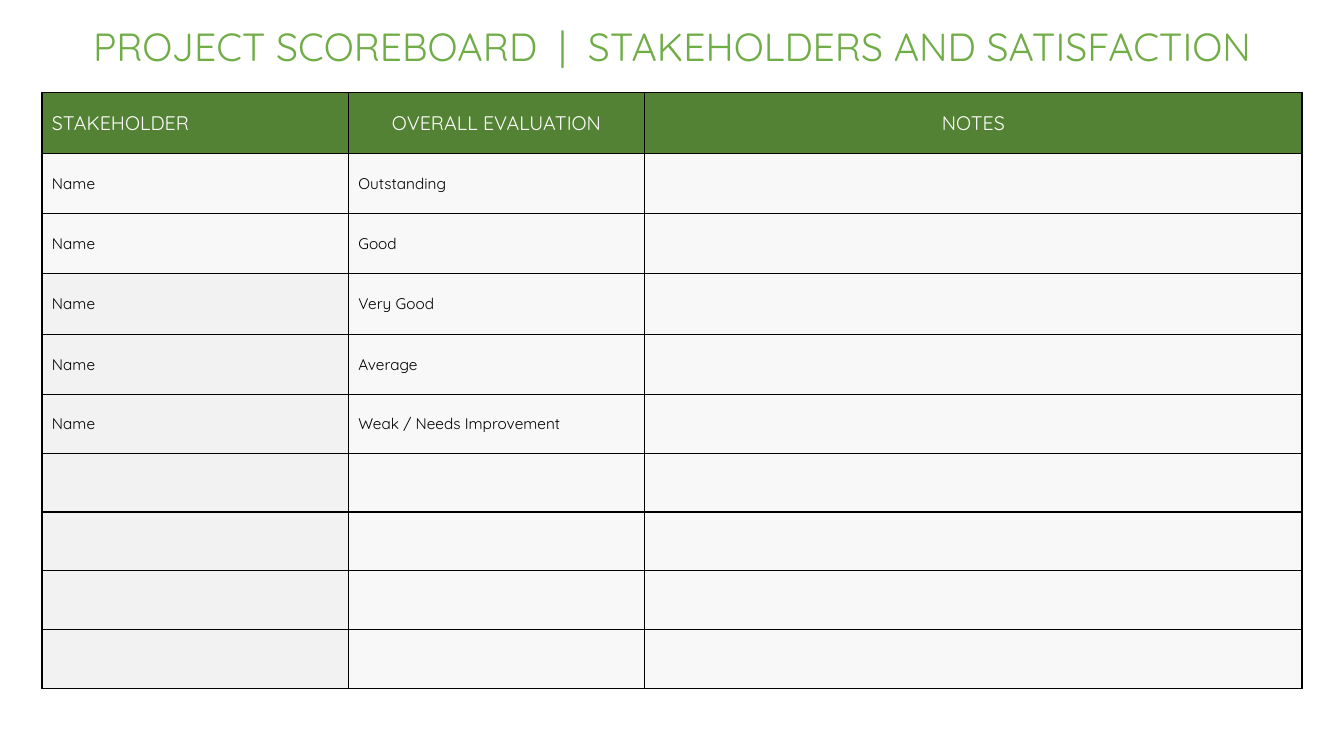
from dataclasses import dataclass

from lxml.etree import SubElement
from pptx import Presentation
from pptx.dml.color import RGBColor
from pptx.enum.text import MSO_ANCHOR, MSO_AUTO_SIZE, PP_ALIGN
from pptx.oxml.ns import qn
from pptx.table import _Cell
from pptx.text.text import TextFrame
from pptx.util import Cm, Pt

FONT = "Quicksand"
LIME, GREEN, GREY = "70AD47", "548235", "F2F2F2"
WHITE, BLACK = "FFFFFF", "000000"
WIDE = 33.87


@dataclass
class Column:
    head: str
    width: float
    align: PP_ALIGN


@dataclass
class Rating:
    name: str = ""
    grade: str = ""
    note: str = ""


COLUMNS = [
    Column("STAKEHOLDER", 7.72, PP_ALIGN.LEFT),
    Column("OVERALL EVALUATION", 7.47, PP_ALIGN.CENTER),
    Column("NOTES", 16.56, PP_ALIGN.CENTER),
]
GRADES = ["Outstanding", "Good", "Very Good", "Average", "Weak / Needs Improvement"]
RATINGS = [Rating("Name", grade) for grade in GRADES] + [Rating() for _ in range(4)]


def color(code: str) -> RGBColor:
    return RGBColor.from_string(code)


def write(frame: TextFrame, text: str, size: float, code: str, align: PP_ALIGN) -> None:
    frame.text = text
    line = frame.paragraphs[0]
    line.alignment = align
    for run in line.runs:
        run.font.name = FONT
        run.font.size = Pt(size)
        run.font.bold = False
        run.font.color.rgb = color(code)


def paint(cell: _Cell, code: str, alpha: int) -> None:
    """Fill a cell with a colour at the given opacity in percent."""
    cell.fill.solid()
    cell.fill.fore_color.rgb = color(code)
    if alpha < 100:
        tint = cell._tc.tcPr.find(f"{qn('a:solidFill')}/{qn('a:srgbClr')}")
        SubElement(tint, qn("a:alpha"), val=str(alpha * 1000))


def border(cell: _Cell, code: str, width: float) -> None:
    """Rule all four sides; the lines must come before the fill."""
    props = cell._tc.get_or_add_tcPr()
    for spot, side in enumerate(("lnL", "lnR", "lnT", "lnB")):
        line = SubElement(props, qn(f"a:{side}"), w=str(Pt(width)))
        fill = SubElement(line, qn("a:solidFill"))
        SubElement(fill, qn("a:srgbClr"), val=code)
        props.insert(spot, line)


def draw(cell: _Cell, text: str, size: float, ink: str, align: PP_ALIGN,
         back: str, alpha: int = 100) -> None:
    write(cell.text_frame, text, size, ink, align)
    cell.vertical_anchor = MSO_ANCHOR.MIDDLE
    cell.margin_left = cell.margin_right = Cm(0.25)
    cell.margin_top = cell.margin_bottom = Cm(0.13)
    paint(cell, back, alpha)
    border(cell, BLACK, 1)


def main() -> None:
    deck = Presentation()
    deck.slide_width, deck.slide_height = Cm(WIDE), Cm(19.05)
    slide = deck.slides.add_slide(deck.slide_layouts[5])

    # Title
    title = slide.shapes.title
    title.left, title.top = Cm(0), Cm(0.43)
    title.width, title.height = Cm(WIDE), Cm(1.45)
    frame = title.text_frame
    frame.word_wrap = True
    frame.auto_size = MSO_AUTO_SIZE.NONE
    frame.vertical_anchor = MSO_ANCHOR.TOP
    write(frame, "PROJECT SCOREBOARD  |  STAKEHOLDERS AND SATISFACTION",
          28, LIME, PP_ALIGN.CENTER)

    # Table grid: the upper half has slightly taller rows
    heights = [1.52] * 5 + [1.48] * 5
    width = sum(col.width for col in COLUMNS)
    table = slide.shapes.add_table(
        len(RATINGS) + 1, len(COLUMNS),
        Cm(1.06), Cm(2.34), Cm(width), Cm(sum(heights))).table
    table.first_row = table.horz_banding = False
    for row, height in zip(table.rows, heights):
        row.height = Cm(height)

    # Header row
    for index, col in enumerate(COLUMNS):
        table.columns[index].width = Cm(col.width)
        draw(table.cell(0, index), col.head, 14, WHITE, col.align, GREEN)

    # Ratings: names from the third row on have a denser fill
    for line, rating in enumerate(RATINGS, 1):
        for index, text in enumerate((rating.name, rating.grade, rating.note)):
            alpha = 95 if index == 0 and line > 2 else 50
            draw(table.cell(line, index), text, 11, BLACK, PP_ALIGN.LEFT, GREY, alpha)

    deck.save("out.pptx")


if __name__ == "__main__":
    main()
